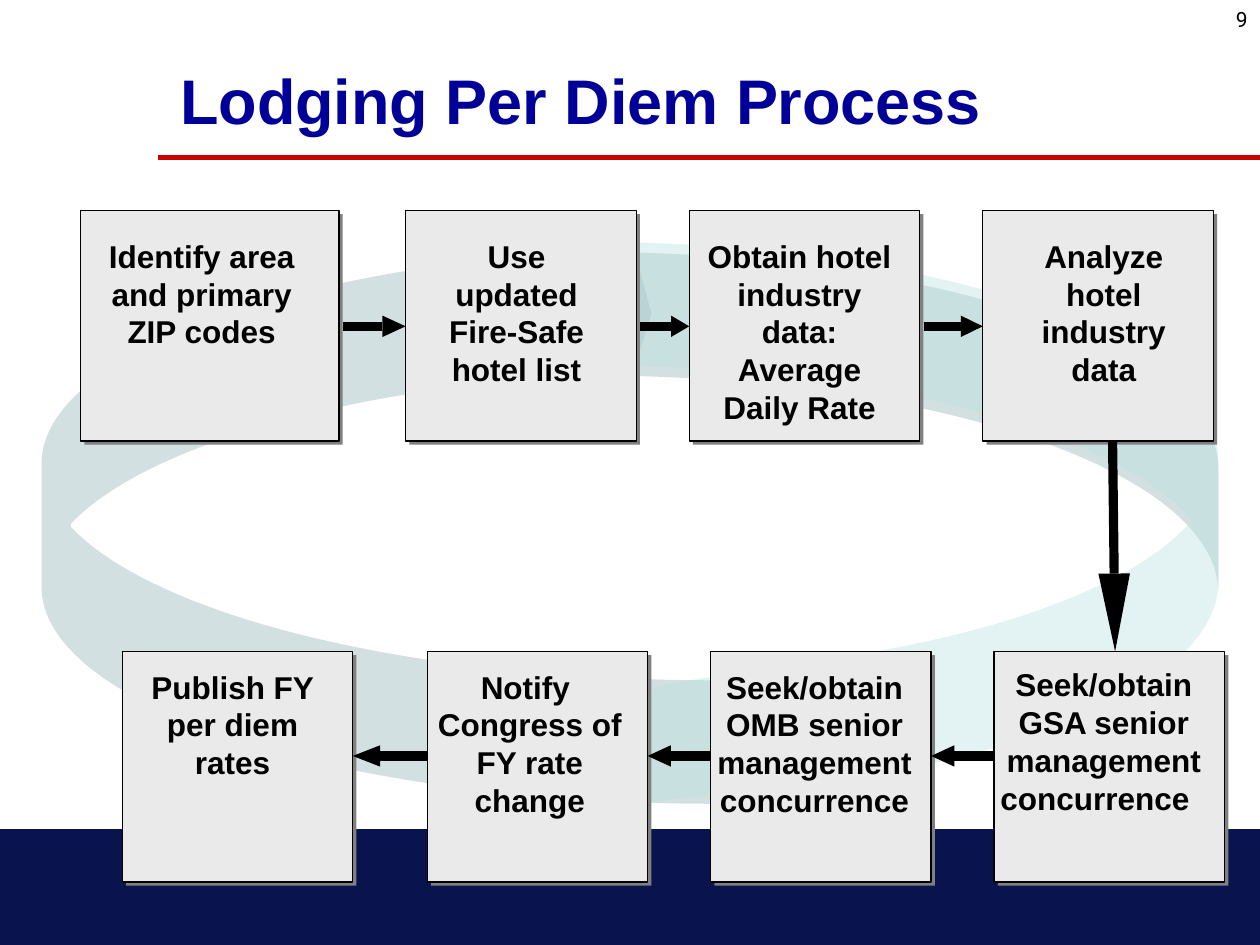
import math

import pptx
import pptx.util
from lxml import etree
from pptx.dml.color import RGBColor
from pptx.enum.shapes import MSO_CONNECTOR, MSO_SHAPE
from pptx.enum.text import MSO_ANCHOR, MSO_AUTO_SIZE, PP_ALIGN
from pptx.oxml.ns import qn
from pptx.util import Inches

COLORS = {
    "title": "000099", "rule": "CC0000", "footer": "09134D", "text": "000000",
    "box": "EAEAEA", "shadow": "808080", "gray_ribbon": "96B4B7", "teal_ribbon": "BBE0E3",
}
COLORS = {part: RGBColor.from_string(value) for part, value in COLORS.items()}

deck = pptx.Presentation()
deck.slide_width, deck.slide_height = Inches(10), Inches(7.5)
slide = deck.slides.add_slide(deck.slide_layouts[5])
shapes = slide.shapes


def add_outline(points, color):
    """Closed, filled outline through points given in inches."""
    vertices = [(Inches(x), Inches(y)) for x, y in points]
    builder = shapes.build_freeform(*vertices[0], scale=1.0)
    builder.add_line_segments(vertices[1:], close=True)
    outline = builder.convert_to_shape()
    outline.shadow.inherit = False
    outline.fill.solid()
    outline.fill.fore_color.rgb = COLORS[color]
    outline.line.fill.background()
    return outline


def arc(center_y, radius_x, start, end, steps=40):
    """Points of a ribbon ellipse centred on x = 0; degrees run clockwise from the right."""
    angles = [math.radians(start + (end - start) * i / steps) for i in range(steps + 1)]
    return [(radius_x * math.cos(a), center_y + RIBBON_RADIUS_Y * math.sin(a)) for a in angles]


# Title and page number
title = shapes.title
title.left, title.top, title.width, title.height = map(Inches, (1.33, 0.5, 8.5, 0.58))
title.text_frame.vertical_anchor = MSO_ANCHOR.MIDDLE
title.text_frame.auto_size = MSO_AUTO_SIZE.NONE
page_number = shapes.add_textbox(Inches(7.92), Inches(0), Inches(2.08), Inches(0.5))
page_number.text_frame.word_wrap = True
for heading, text, align, font, size, bold, color in (
    (title, "Lodging Per Diem Process", PP_ALIGN.LEFT, "Arial", 36, True, "title"),
    (page_number, "9", PP_ALIGN.RIGHT, "Roboto", 12, False, "text"),
):
    paragraph = heading.text_frame.paragraphs[0]
    paragraph.alignment = align
    run = paragraph.add_run()
    run.text = text
    run.font.name, run.font.size, run.font.bold = font, pptx.util.Pt(size), bold
    run.font.color.rgb = COLORS[color]

# Circular ribbon: two half rings that end in an arrow point. Each edge is part of an
# ellipse, and the two ellipses of a ring lie half a ribbon width above and below its centre.
RIBBON_RADIUS_Y = 1.72
HALF_WIDTH = 0.49
POINT_ANGLE = 70.6    # where the band ends and the arrow point begins
CORNER_ANGLE = 17     # where the two inner edges meet

# The left half ring is the right one turned by 180 degrees (turn = -1)
half_rings = [
    ("gray_ribbon", -1, (5.66, 4.17), 5.33, [(0.64, 2.25), (0.49, 1.68), (0.61, 1.29)]),
    ("teal_ribbon", 1, (4.67, 4.13), 5, [(0.51, 2.23), (0, 1.72), (0.56, 1.31)]),
]
ribbons = []
for color, turn, (center_x, center_y), radius_x, arrow_point in half_rings:
    half_ring = (
        arc(-HALF_WIDTH, radius_x, -90, 0)                          # outer edge, far half
        + arc(HALF_WIDTH, radius_x, 0, POINT_ANGLE)                 # outer edge, near half
        + arrow_point
        + arc(-HALF_WIDTH, radius_x, POINT_ANGLE, CORNER_ANGLE)     # inner edge, near half
        + arc(HALF_WIDTH, radius_x, -CORNER_ANGLE, -90)             # inner edge, far half
    )
    ribbons.append(([(center_x + turn * x, center_y + turn * y) for x, y in half_ring], color))

# Gray shade under the far half of the right ring
shade = arc(-HALF_WIDTH, 5, -90, 0) + arc(HALF_WIDTH, 5, 0, -90)
ribbons.insert(1, ([(4.67 + x, 4.21 + y) for x, y in shade], "gray_ribbon"))
for points, color in ribbons:
    ribbon = add_outline(points, color)
    tint = ribbon._element.spPr.find(qn("a:solidFill"))[0]
    etree.SubElement(tint, qn("a:alpha"), val="41000")

# Steps in order: box left and width, label left, top and width, label line count,
# paragraphs with their right indent
TOP_ROW, BOTTOM_ROW = 1.67, 5.17
BOX_HEIGHT, SHADOW_OFFSET = 1.83, 0.03
LINE_HEIGHT, LABEL_INSETS = 0.3, 0.1
top_steps = [
    (0.64, 2.05, (0.64, 1.83, 1.92), 3, [("Identify area and primary ZIP codes", 0)]),
    (3.22, 1.83, (3.3, 1.83, 1.6), 4, [("Use updated Fire-Safe hotel list", 0)]),
    (5.47, 1.83, (5.47, 1.83, 1.75), 5, [("Obtain hotel industry data: Average Daily Rate", 0)]),
    (7.8, 1.83, (7.89, 1.83, 1.74), 4, [("Analyze hotel industry data", 0)]),
]
bottom_steps = [
    (7.89, 1.83, (7.8, 5.23, 1.92), 4,
     [("Seek/obtain GSA senior management", 0), ("concurrence", 0.14)]),
    (5.64, 1.75, (5.55, 5.25, 1.83), 4, [("Seek/obtain OMB senior management concurrence", 0)]),
    (3.39, 1.75, (3.22, 5.25, 1.97), 4, [("Notify", 0.07), ("Congress of FY rate change", 0)]),
    (0.97, 1.83, (0.97, 5.25, 1.75), 3, [("Publish FY per diem rates", 0)]),
]

# Footer band, then each step's shadow and box
panels = [((0, 6.58, 10, 0.92), "footer")]
for row_top, row_steps in ((TOP_ROW, top_steps), (BOTTOM_ROW, bottom_steps)):
    for left, width, *_ in row_steps:
        for offset, color in ((SHADOW_OFFSET, "shadow"), (0, "box")):
            panels.append(((left + offset, row_top + offset, width, BOX_HEIGHT), color))
for area, color in panels:
    panel = shapes.add_shape(MSO_SHAPE.RECTANGLE, *map(Inches, area))
    panel.shadow.inherit = False
    panel.fill.solid()
    panel.fill.fore_color.rgb = COLORS[color]
    if color == "box":
        panel.line.color.rgb = COLORS["text"]
        panel.line.width = pptx.util.Pt(0.75)
    else:
        panel.line.fill.background()

for _, _, (left, top, width), line_count, paragraphs in top_steps + bottom_steps:
    height = line_count * LINE_HEIGHT + LABEL_INSETS
    label = shapes.add_textbox(*map(Inches, (left, top, width, height))).text_frame
    label.word_wrap = True
    label.auto_size = MSO_AUTO_SIZE.SHAPE_TO_FIT_TEXT
    for index, (text, right_indent) in enumerate(paragraphs):
        paragraph = label.add_paragraph() if index else label.paragraphs[0]
        paragraph.alignment = PP_ALIGN.CENTER
        paragraph._p.get_or_add_pPr().set("marR", str(Inches(right_indent)))
        run = paragraph.add_run()
        run.text = text
        run.font.name, run.font.size, run.font.bold = "Arial", pptx.util.Pt(18), True
        run.font.color.rgb = COLORS["text"]

# Arrows run right along the top row, down, then left along the bottom row
HEAD_SHARE = 0.37    # part of an arrow's length taken by its head
TOP_ARROW_Y, BOTTOM_ARROW_Y = 2.59, 6
arrows = [((8.83, TOP_ROW + BOX_HEIGHT), (8.85, BOTTOM_ROW), 0.25)]
for step, following in zip(top_steps, top_steps[1:]):
    tail_x = step[0] + step[1] + SHADOW_OFFSET
    arrows.append(((tail_x, TOP_ARROW_Y), (following[0], TOP_ARROW_Y), 0.17))
for step, following in zip(bottom_steps, bottom_steps[1:]):
    tip_x = following[0] + following[1]
    arrows.append(((step[0], BOTTOM_ARROW_Y), (tip_x, BOTTOM_ARROW_Y), 0.17))

title_rule = ((10, 1.25), (1.25, 1.25), "rule", 3)
lines = [title_rule]
for tail, tip, head_width in arrows:
    dx, dy = tip[0] - tail[0], tip[1] - tail[1]
    neck_x, neck_y = tip[0] - dx * HEAD_SHARE, tip[1] - dy * HEAD_SHARE
    half = head_width / 2 / math.hypot(dx, dy)
    add_outline([(neck_x - dy * half, neck_y + dx * half), tip,
                 (neck_x + dy * half, neck_y - dx * half)], "text")
    lines.append((tail, (neck_x, neck_y), "text", 5.25))

for start, end, color, width in lines:
    line = shapes.add_connector(MSO_CONNECTOR.STRAIGHT, *map(Inches, start + end))
    line.line.color.rgb = COLORS[color]
    line.line.width = pptx.util.Pt(width)
    etree.SubElement(line._element.spPr, qn("a:effectLst"))

deck.save("out.pptx")
